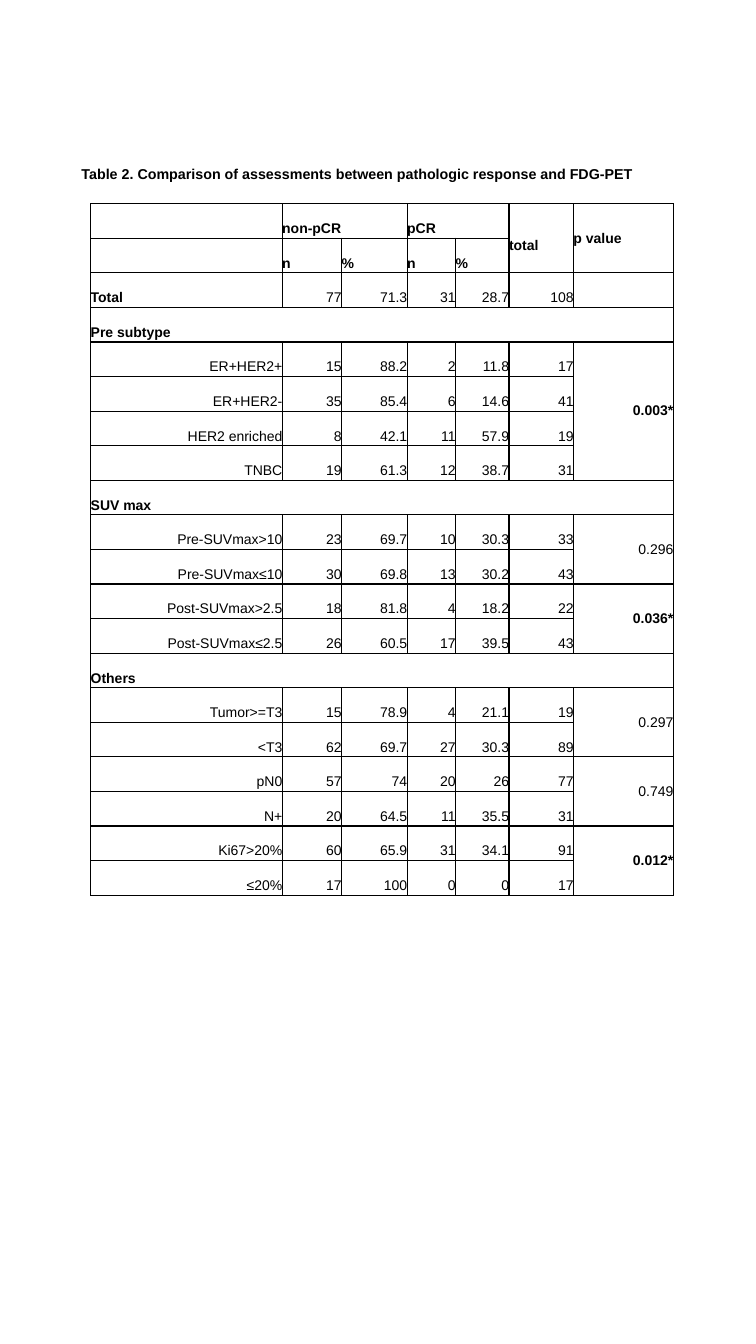
from lxml import etree
from pptx import Presentation
from pptx.dml.color import RGBColor
from pptx.enum.text import MSO_ANCHOR as Anchor, PP_ALIGN as Align
from pptx.oxml.ns import qn
from pptx.util import Inches, Pt

COLORS = {"ink": "000000", "paper": "FFFFFF"}
WIDTHS = [1.9, 0.59, 0.65, 0.48, 0.53, 0.64, 0.99]
P_COL = len(WIDTHS) - 1

HEAD = [
    ["", "non-pCR", "", "pCR", "", "total", "p value"],
    ["", "n", "%", "n", "%"],
]
TOTAL = ["Total", "77", "71.3", "31", "28.7", "108"]
# Each section holds groups of rows that share one p value.
SECTIONS = [
    ("Pre subtype", [
        ("0.003*", [
            ["ER+HER2+", "15", "88.2", "2", "11.8", "17"],
            ["ER+HER2-", "35", "85.4", "6", "14.6", "41"],
            ["HER2 enriched", "8", "42.1", "11", "57.9", "19"],
            ["TNBC", "19", "61.3", "12", "38.7", "31"],
        ]),
    ]),
    ("SUV max", [
        ("0.296", [
            ["Pre-SUVmax>10", "23", "69.7", "10", "30.3", "33"],
            ["Pre-SUVmax≤10", "30", "69.8", "13", "30.2", "43"],
        ]),
        ("0.036*", [
            ["Post-SUVmax>2.5", "18", "81.8", "4", "18.2", "22"],
            ["Post-SUVmax≤2.5", "26", "60.5", "17", "39.5", "43"],
        ]),
    ]),
    ("Others", [
        ("0.297", [
            ["Tumor>=T3", "15", "78.9", "4", "21.1", "19"],
            ["<T3", "62", "69.7", "27", "30.3", "89"],
        ]),
        ("0.749", [
            ["pN0", "57", "74", "20", "26", "77"],
            ["N+", "20", "64.5", "11", "35.5", "31"],
        ]),
        ("0.012*", [
            ["Ki67>20%", "60", "65.9", "31", "34.1", "91"],
            ["≤20%", "17", "100", "0", "0", "17"],
        ]),
    ]),
]


def rgb(name):
    return RGBColor.from_string(COLORS[name])


def write(frame, text, size=10, bold=False, align=Align.LEFT, gap=1.0):
    para = frame.paragraphs[0]
    para.alignment = align
    para.line_spacing = gap
    run = para.add_run()
    run.text = text
    font = run.font
    font.name, font.size, font.bold = "Arial", Pt(size), bold
    font.color.rgb = rgb("ink")


def style(cell):
    """Give a cell its black rules, white fill and zero margins."""
    props = cell._tc.get_or_add_tcPr()
    for side in ("lnL", "lnR", "lnT", "lnB"):
        line = etree.SubElement(props, qn(f"a:{side}"), w=str(Pt(1)))
        fill = etree.SubElement(line, qn("a:solidFill"))
        etree.SubElement(fill, qn("a:srgbClr"), val=COLORS["ink"])
    cell.fill.solid()
    cell.fill.fore_color.rgb = rgb("paper")
    cell.margin_left = cell.margin_right = 0
    cell.margin_top = cell.margin_bottom = 0
    cell.vertical_anchor = Anchor.MIDDLE


def put_row(table, row, texts, head=False):
    for col, text in enumerate(texts):
        if text:
            bold = head or text == "Total"
            write(table.cell(row, col).text_frame, text, bold=bold,
                  align=Align.LEFT if bold else Align.RIGHT,
                  gap=1.0 if col == P_COL else 2.0)


def add_title(slide, left, top, width, height):
    box = slide.shapes.add_textbox(left, top, width, height)
    box.text_frame.word_wrap = True
    write(box.text_frame, "Table 2. Comparison of assessments between "
          "pathologic response and FDG-PET", size=10.2, bold=True)


def add_results(slide, left, top, width, height):
    count = len(HEAD) + 1 + sum(
        1 + sum(len(rows) for _, rows in groups) for _, groups in SECTIONS)
    table = slide.shapes.add_table(
        count, len(WIDTHS), left, top, width, height).table
    table.first_row = table.horz_banding = False
    for col, size in zip(table.columns, WIDTHS):
        col.width = Inches(size)
    for cell in table.iter_cells():
        style(cell)

    for row, texts in enumerate(HEAD):
        put_row(table, row, texts, head=True)
    for col in (1, 3):
        table.cell(0, col).merge(table.cell(0, col + 1))
    for col in (5, P_COL):
        table.cell(0, col).merge(table.cell(1, col))

    row = len(HEAD)
    put_row(table, row, TOTAL)
    row += 1
    for name, groups in SECTIONS:
        put_row(table, row, [name], head=True)
        table.cell(row, 0).merge(table.cell(row, P_COL))
        row += 1
        for value, rows in groups:
            first = table.cell(row, P_COL)
            first.merge(table.cell(row + len(rows) - 1, P_COL))
            write(first.text_frame, value, bold=value.endswith("*"),
                  align=Align.RIGHT)
            for texts in rows:
                put_row(table, row, texts)
                row += 1


def main():
    deck = Presentation()
    deck.slide_width, deck.slide_height = Inches(7.5), Inches(13.33)
    slide = deck.slides.add_slide(deck.slide_layouts[6])
    add_title(slide, Inches(0.71), Inches(1.59), Inches(5.78), Inches(0.44))
    add_results(slide, Inches(0.9), Inches(2.02), Inches(5.78), Inches(6.86))
    deck.save("out.pptx")


if __name__ == "__main__":
    main()
